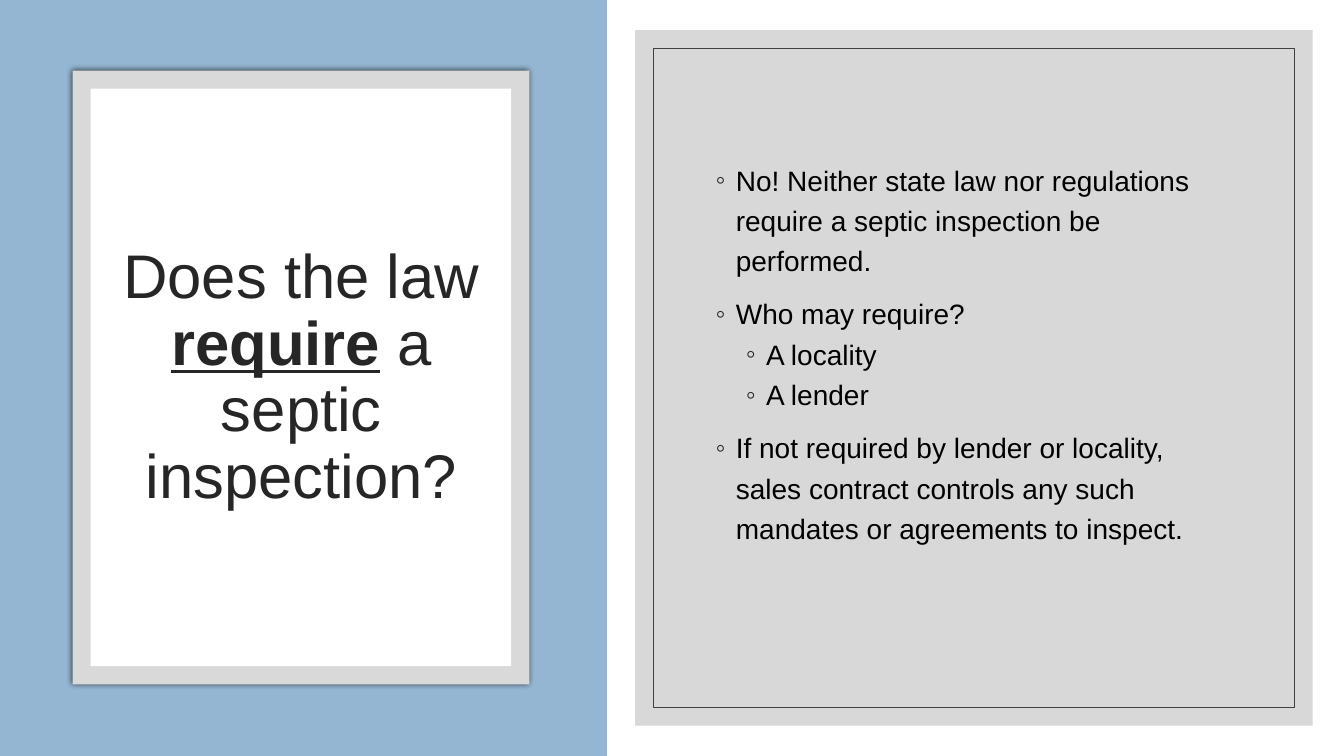
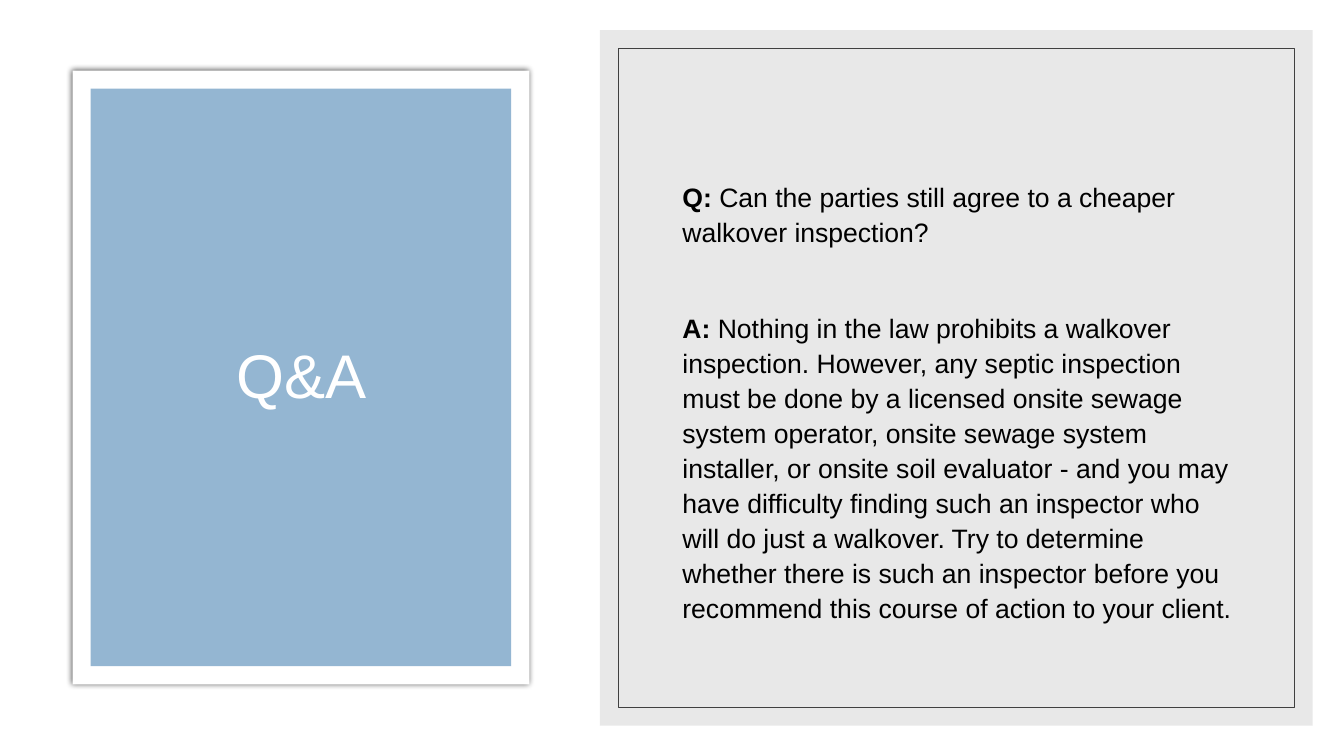
from dataclasses import dataclass

from lxml import etree
from pptx import Presentation
from pptx import util as u
from pptx.dml import color
from pptx.enum import shapes, text
from pptx.oxml import ns

COLORS = {
    "blue": "94B6D2", "white": "FFFFFF", "silver": "D9D9D9", "gray": "BFBFBF",
    "ink": "262626", "rule": "404040", "black": "000000",
}
FONT = "Arial"
MAT = 0.18            # gap between an outer rectangle and the one inside it
PANEL_RIGHT = 13.02


@dataclass(frozen=True)
class Box:
    left: float
    top: float
    width: float
    height: float

    def inset(self, gap: float) -> "Box":
        return Box(self.left + gap, self.top + gap,
                   self.width - 2 * gap, self.height - 2 * gap)

    def lengths(self) -> list:
        return [u.Inches(v) for v in (self.left, self.top, self.width, self.height)]


@dataclass(frozen=True)
class Run:
    text: str
    bold: bool = False
    underline: bool = False


@dataclass(frozen=True)
class Para:
    runs: tuple
    line_spacing: float = 1.0
    space_before: float = 0
    bullet_indent: float = 0      # inches; 0 means no bullet


@dataclass(frozen=True)
class Page:
    title: tuple
    title_color: str
    frame_fill: str
    card_fill: str
    panel_left: float
    panel_fill: str
    body_box: Box
    body_size: float
    body: tuple
    band_width: float = 0


FRAME = Box(0.72, 0.7, 4.53, 6.09)
TITLE = Box(1.08, 1.3, 3.82, 4.91)


def point(words: str) -> Para:
    return Para((Run(words),), 1.2, 9, 0.2)


def subpoint(words: str) -> Para:
    return Para((Run(words),), 1.0, 5, 0.5)


def answer(label: str, words: str, space_before: float) -> Para:
    return Para((Run(label, bold=True), Run(words)), 1.1, space_before)


PAGES = (
    Page(
        title=(Run("Does the law "), Run("require", True, True),
               Run(" a septic inspection?")),
        title_color="ink", frame_fill="silver", card_fill="white",
        panel_left=6.3, panel_fill="gray",
        body_box=Box(7, 1.02, 5.33, 4.92), body_size=20,
        body=(
            point("No! Neither state law nor regulations require a septic "
                  "inspection be performed."),
            point("Who may require?"),
            subpoint("A locality"),
            subpoint("A lender"),
            point("If not required by lender or locality, sales contract "
                  "controls any such mandates or agreements to inspect."),
        ),
        band_width=6.02,
    ),
    Page(
        title=(Run("Q&A"),),
        title_color="white", frame_fill="white", card_fill="blue",
        panel_left=5.95, panel_fill="silver",
        body_box=Box(6.67, 1.49, 5.66, 4.98), body_size=19,
        body=(
            answer("Q: ", "Can the parties still agree to a cheaper walkover "
                   "inspection?", 9),
            answer("A: ", "Nothing in the law prohibits a walkover inspection. "
                   "However, any septic inspection must be done by a licensed "
                   "onsite sewage system operator, onsite sewage system "
                   "installer, or onsite soil evaluator - and you may have "
                   "difficulty finding such an inspector who will do just a "
                   "walkover. Try to determine whether there is such an "
                   "inspector before you recommend this course of action to "
                   "your client.", 43),
        ),
    ),
)


def rgb(name: str) -> color.RGBColor:
    return color.RGBColor.from_string(COLORS[name])


def add_xml(parent, tag: str, **attributes: str):
    return etree.SubElement(parent, ns.qn(tag), attributes)


def add_rect(slide, box: Box, fill: str = "", line: str = "", opacity: int = 100):
    rect = slide.shapes.add_shape(shapes.MSO_SHAPE.RECTANGLE, *box.lengths())
    rect.shadow.inherit = False
    if fill:
        rect.fill.solid()
        rect.fill.fore_color.rgb = rgb(fill)
        if opacity < 100:
            tint = rect.fill._xPr.find(ns.qn("a:solidFill"))[0]
            add_xml(tint, "a:alpha", val=str(opacity * 1000))
    else:
        rect.fill.background()
    if line:
        rect.line.color.rgb = rgb(line)
        rect.line.width = u.Pt(0.5)
    else:
        rect.line.fill.background()
    return rect


def add_glow_shadow(rect) -> None:
    effects = rect._element.spPr.find(ns.qn("a:effectLst"))
    shadow = add_xml(effects, "a:outerShdw", blurRad=str(u.Pt(4)), dist="0",
                     dir="0", algn="ctr", rotWithShape="0")
    tint = add_xml(shadow, "a:srgbClr", val=COLORS["black"])
    add_xml(tint, "a:alpha", val="66000")


def add_bullet(paragraph, indent: float) -> None:
    props = paragraph._p.get_or_add_pPr()
    props.set("marL", str(u.Inches(indent)))
    props.set("indent", str(u.Inches(-0.2)))
    add_xml(add_xml(props, "a:buClr"), "a:srgbClr", val=COLORS["ink"])
    add_xml(props, "a:buFont", typeface=FONT)
    add_xml(props, "a:buChar", char="◦")


def add_text(slide, box: Box, paras: tuple, size: float, ink: str,
             align=text.PP_ALIGN.LEFT) -> None:
    frame = slide.shapes.add_textbox(*box.lengths()).text_frame
    frame.word_wrap = True
    frame.vertical_anchor = text.MSO_ANCHOR.MIDDLE
    for index, para in enumerate(paras):
        paragraph = frame.add_paragraph() if index else frame.paragraphs[0]
        layout = {"alignment": align, "line_spacing": para.line_spacing,
                  "space_before": u.Pt(para.space_before)}
        for key, value in layout.items():
            setattr(paragraph, key, value)
        if para.bullet_indent:
            add_bullet(paragraph, para.bullet_indent)
        for part in para.runs:
            run = paragraph.add_run()
            run.text = part.text
            style = {"name": FONT, "size": u.Pt(size), "bold": part.bold,
                     "underline": part.underline}
            for key, value in style.items():
                setattr(run.font, key, value)
            run.font.color.rgb = rgb(ink)


def build_page(deck, page: Page) -> None:
    slide = deck.slides.add_slide(deck.slide_layouts[6])

    # Title card on the left
    if page.band_width:
        add_rect(slide, Box(0, 0, page.band_width, 7.5), "blue")
    add_glow_shadow(add_rect(slide, FRAME, page.frame_fill))
    add_rect(slide, FRAME.inset(MAT), page.card_fill)
    add_text(slide, TITLE, (Para(page.title, 0.9),), 44, page.title_color,
             text.PP_ALIGN.CENTER)

    # Body panel on the right
    panel = Box(page.panel_left, 0.3, PANEL_RIGHT - page.panel_left, 6.9)
    add_rect(slide, panel, page.panel_fill, opacity=60)
    add_rect(slide, panel.inset(MAT), line="rule")
    add_text(slide, page.body_box, page.body, page.body_size, "black")


def main() -> None:
    deck = Presentation()
    deck.slide_width, deck.slide_height = u.Inches(13.33), u.Inches(7.5)
    for page in PAGES:
        build_page(deck, page)
    deck.save("out.pptx")


if __name__ == "__main__":
    main()
